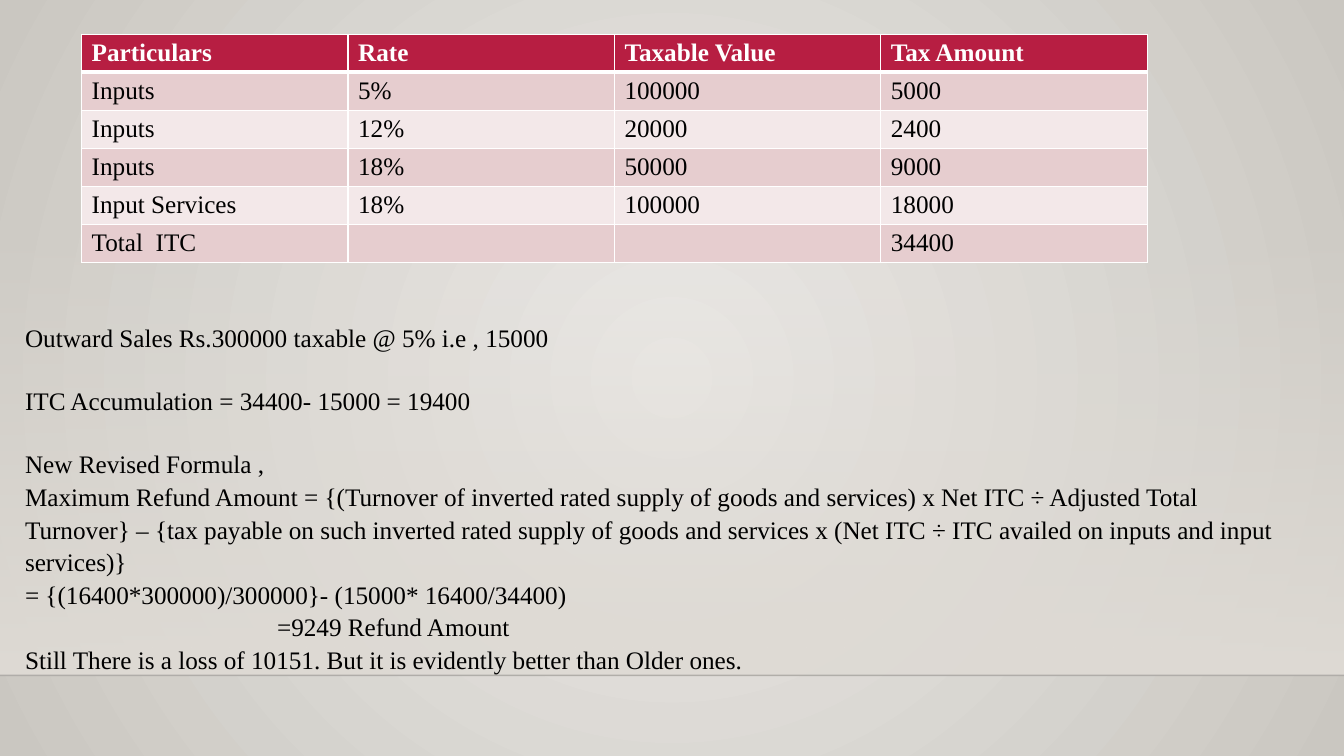
from dataclasses import dataclass

import lxml.etree
import pptx
import pptx.dml.color
import pptx.enum.shapes
import pptx.oxml.ns
import pptx.util

qn = pptx.oxml.ns.qn
SLIDE_W, SLIDE_H = 13.33, 7.5
FLOOR = 6.7 / SLIDE_H


@dataclass(frozen=True)
class Theme:
    font: str = "Times New Roman"
    size: float = 18
    line_spacing: float = 1.08
    ink: str = "000000"
    paper: str = "FFFFFF"
    header: str = "B71E42"
    bands: tuple = ("E6CDCF", "F3E8E9")
    backdrop: tuple = ("ECEAE7", "CAC7C1")
    wall: str = "DFDBD5"
    floor_line: str = "000001"


THEME = Theme()
BLANK_LINE = round(THEME.size * 1.2)

TAX_ROWS = [
    ("Particulars", "Rate", "Taxable Value", "Tax Amount"),
    ("Inputs", "5%", "100000", "5000"),
    ("Inputs", "12%", "20000", "2400"),
    ("Inputs", "18%", "50000", "9000"),
    ("Input Services", "18%", "100000", "18000"),
    ("Total  ITC", "", "", "34400"),
]

# Each paragraph: its lines, space before in points, left indent in inches
WORKING = [
    (["Outward Sales Rs.300000 taxable @ 5% i.e , 15000"], 0, 0),
    (["ITC Accumulation = 34400- 15000 = 19400"], BLANK_LINE, 0),
    (["New Revised Formula ,"], BLANK_LINE, 0),
    (["Maximum Refund Amount = {(Turnover of inverted rated supply of goods and services) "
      "x Net ITC ÷ Adjusted Total Turnover} – {tax payable on such inverted rated supply "
      "of goods and services x (Net ITC ÷ ITC availed on inputs and input services)}",
      "= {(16400*300000)/300000}- (15000* 16400/34400)"], 0, 0),
    (["=9249 Refund Amount"], 0, 2.5),
    (["Still There is a loss of 10151. But it is evidently better than Older ones."], 0, 0),
]


def across(share):
    return pptx.util.Inches(SLIDE_W * share)


def down(share):
    return pptx.util.Inches(SLIDE_H * share)


def rgb(code):
    return pptx.dml.color.RGBColor.from_string(code)


def set_opacity(color_element, percent):
    lxml.etree.SubElement(color_element, qn("a:alpha"), val=str(percent * 1000))


def add_run(paragraph, text, color, bold=False):
    run = paragraph.add_run()
    run.text = text
    run.font.name, run.font.size, run.font.bold = THEME.font, pptx.util.Pt(THEME.size), bold
    run.font.color.rgb = rgb(color)


def fill_gradient(fill, colors):
    fill.gradient()
    for stop, color in zip(fill.gradient_stops, colors):
        stop.color.rgb = rgb(color)


def paint_backdrop(slide):
    """Radial gradient spreading from the centre of the slide."""
    fill_gradient(slide.background.fill, THEME.backdrop)
    gradient = slide._element.find(".//" + qn("a:gradFill"))
    gradient.remove(gradient.find(qn("a:lin")))
    spread = lxml.etree.SubElement(gradient, qn("a:path"))
    spread.set("path", "circle")
    lxml.etree.SubElement(spread, qn("a:fillToRect"),
                          dict.fromkeys("ltrb", "50000"))


def add_wall(slide, top, bottom):
    """Band that fades in from clear at its top to solid at its bottom."""
    wall = slide.shapes.add_shape(pptx.enum.shapes.MSO_SHAPE.RECTANGLE,
                                  0, down(top), across(1), down(bottom - top))
    wall.shadow.inherit = False
    wall.line.fill.background()
    fill_gradient(wall.fill, (THEME.wall, THEME.wall))
    wall.fill.gradient_angle = 270
    set_opacity(wall._element.spPr.find(".//" + qn("a:srgbClr")), 0)


def add_floor_line(slide, height):
    edge = slide.shapes.add_connector(pptx.enum.shapes.MSO_CONNECTOR.STRAIGHT,
                                      0, down(height), across(1), down(height))
    edge.line.width = pptx.util.Pt(1)
    edge.line.color.rgb = rgb(THEME.floor_line)
    properties = edge._element.spPr
    set_opacity(properties.find(".//" + qn("a:srgbClr")), 20)
    lxml.etree.SubElement(properties, qn("a:effectLst"))


def border_cell(cell, widths):
    """Draw the left, right, top and bottom borders, widths in points."""
    properties = cell._tc.get_or_add_tcPr()
    for place, (side, width) in enumerate(zip("LRTB", widths)):
        border = lxml.etree.Element(qn(f"a:ln{side}"), w=str(pptx.util.Pt(width)))
        solid = lxml.etree.SubElement(border, qn("a:solidFill"))
        lxml.etree.SubElement(solid, qn("a:srgbClr"), val=THEME.paper)
        properties.insert(place, border)


def write_cell(cell, text, color, bold):
    paragraph = cell.text_frame.paragraphs[0]
    if text:
        add_run(paragraph, text, color, bold)
    else:
        ending = lxml.etree.SubElement(paragraph._p, qn("a:endParaRPr"),
                                       sz=str(int(THEME.size * 100)))
        lxml.etree.SubElement(ending, qn("a:latin"), typeface=THEME.font)


def add_tax_table(slide, left, top, width, height):
    table = slide.shapes.add_table(len(TAX_ROWS), len(TAX_ROWS[0]), across(left),
                                   down(top), across(width), down(height)).table
    for row, values in enumerate(TAX_ROWS):
        is_header = row == 0
        band = THEME.header if is_header else THEME.bands[(row - 1) % 2]
        for column, value in enumerate(values):
            cell = table.cell(row, column)
            cell.fill.solid()
            cell.fill.fore_color.rgb = rgb(band)
            border_cell(cell, (1, 1, 3 if row == 1 else 1, 3 if is_header else 1))
            write_cell(cell, value, THEME.paper if is_header else THEME.ink, is_header)


def add_working(slide, left, top, width, height):
    frame = slide.shapes.add_textbox(across(left), down(top),
                                     across(width), down(height)).text_frame
    frame.word_wrap = True
    for number, (lines, space_before, indent) in enumerate(WORKING):
        paragraph = frame.add_paragraph() if number else frame.paragraphs[0]
        paragraph.line_spacing = THEME.line_spacing
        if space_before:
            paragraph.space_before = pptx.util.Pt(space_before)
        if indent:
            paragraph._p.get_or_add_pPr().set("marL", str(pptx.util.Inches(indent)))
        for position, line in enumerate(lines):
            if position:
                paragraph.add_line_break()
            add_run(paragraph, line, THEME.ink)


def main():
    deck = pptx.Presentation()
    deck.slide_width, deck.slide_height = across(1), down(1)
    slide = deck.slides.add_slide(deck.slide_layouts[6])
    paint_backdrop(slide)
    add_wall(slide, 2.21 / SLIDE_H, FLOOR)
    add_floor_line(slide, FLOOR)
    add_tax_table(slide, 0.81 / SLIDE_W, 0.34 / SLIDE_H, 10.57 / SLIDE_W, 2.26 / SLIDE_H)
    add_working(slide, 0.15 / SLIDE_W, 3.12 / SLIDE_H, 12.74 / SLIDE_W, 4.38 / SLIDE_H)
    deck.save("out.pptx")


if __name__ == "__main__":
    main()
